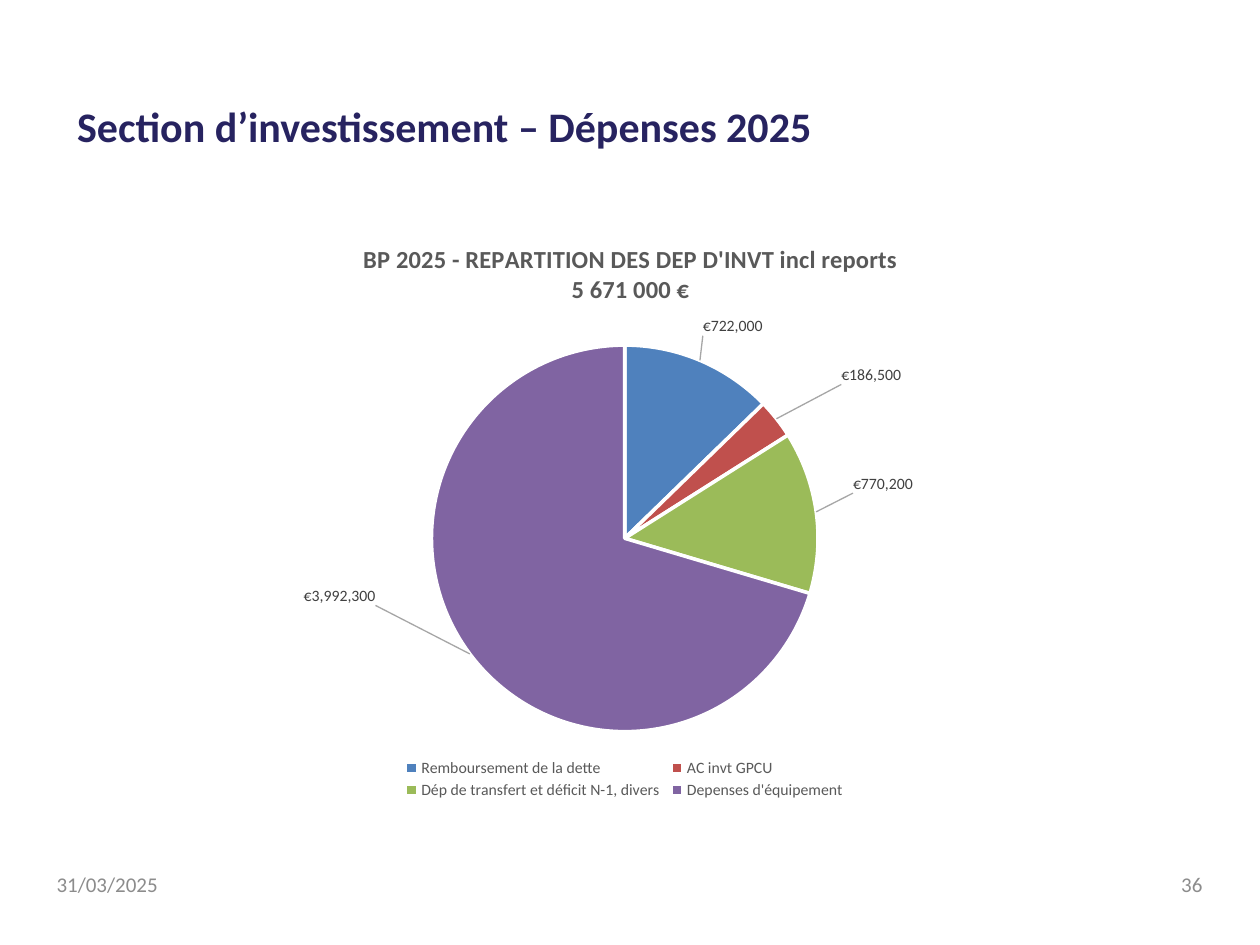
from lxml import etree
from pptx import Presentation, util as u
from pptx.chart.data import CategoryChartData
from pptx.dml.color import RGBColor
from pptx.enum import chart as ch, text
from pptx.oxml import parse_xml
from pptx.oxml.ns import nsdecls, qn

COLORS = {"title": "272360", "footer": "8C8C8C", "heading": "595959",
          "label": "404040", "leader": "A6A6A6", "border": "FFFFFF"}
FONT = "Calibri"
TITLE = "Section d’investissement – Dépenses 2025"
CHART_TITLE = ["BP 2025 - REPARTITION DES DEP D'INVT incl reports", "5 671 000 €"]
# category, amount, slice colour, label shift as fractions of the chart
EXPENSES = [
    ("Remboursement de la dette", 722000, "4F81BD", (0, -0.03)),
    ("AC invt GPCU", 186500, "C0504D", (0.06, -0.05)),
    ("Dép de transfert et déficit N-1, divers", 770200, "9BBB59", (0.03, -0.03)),
    ("Depenses d'équipement", 3992300, "8064A2", (-0.09, -0.12)),
]
FOOTERS = [("31/03/2025", 0.89, text.PP_ALIGN.LEFT),
           ("36", 18.57, text.PP_ALIGN.RIGHT)]


def style(font, size, color, bold=False):
    font.name, font.size, font.bold = FONT, u.Pt(size), bold
    font.color.rgb = RGBColor.from_string(COLORS[color])


def place(shape, left, top, width, height):
    shape.left, shape.top = u.Cm(left), u.Cm(top)
    shape.width, shape.height = u.Cm(width), u.Cm(height)


def write(shape, words, align, *look):
    frame = shape.text_frame
    frame.word_wrap = True
    frame.vertical_anchor = text.MSO_ANCHOR.MIDDLE
    paragraph = frame.paragraphs[0]
    paragraph.alignment = align
    run = paragraph.add_run()
    run.text = words
    style(run.font, *look)


def set_layout(parent, after, **values):
    """Give a chart part a manual layout, placed after the named child."""
    for old in parent.findall(qn("c:layout")):
        parent.remove(old)
    layout = parse_xml(f"<c:layout {nsdecls('c')}><c:manualLayout/></c:layout>")
    for tag, value in values.items():
        etree.SubElement(layout[0], qn(f"c:{tag}")).set("val", str(value))
    if after is None:
        parent.insert(0, layout)
    else:
        parent.find(qn(after)).addnext(layout)


def add_expense_chart(slide):
    data = CategoryChartData()
    data.categories = [row[0] for row in EXPENSES]
    data.add_series("Series 1", [row[1] for row in EXPENSES])
    chart = slide.shapes.add_chart(ch.XL_CHART_TYPE.PIE, u.Cm(2.69), u.Cm(4.32),
                                   u.Cm(19.81), u.Cm(11.99), data).chart
    style(chart.font, 10, "label")
    edges = {"xMode": "edge", "yMode": "edge"}

    frame = chart.chart_title.text_frame
    for index, line in enumerate(CHART_TITLE):
        paragraph = frame.add_paragraph() if index else frame.paragraphs[0]
        run = paragraph.add_run()
        run.text = line
        style(run.font, 14, "heading", True)
    chart.chart_title.include_in_layout = False
    set_layout(chart.chart_title._element, "c:tx", **edges, x=0.23, y=0.04)

    chart.has_legend = True
    legend = chart.legend
    legend.position = ch.XL_LEGEND_POSITION.BOTTOM
    legend.include_in_layout = False
    style(legend.font, 9, "heading")
    set_layout(legend._element, "c:legendPos", **edges, x=0.27, y=0.91, w=0.46, h=0.08)

    plot = chart.plots[0]
    plot.vary_by_categories = True
    set_layout(chart._chartSpace.chart.plotArea, None, layoutTarget="inner", **edges,
               x=0.3, y=0.22, w=0.4, h=0.65)

    series = plot.series[0]
    labels = series.data_labels
    labels.show_value = True
    labels.number_format, labels.number_format_is_linked = '"€"#,##0', False
    labels.position = ch.XL_LABEL_POSITION.OUTSIDE_END
    style(labels.font, 9, "label")
    for index, (_, _, color, (x, y)) in enumerate(EXPENSES):
        point = series.points[index]
        point.format.fill.solid()
        point.format.fill.fore_color.rgb = RGBColor.from_string(color)
        point.format.line.width = u.Pt(2)
        point.format.line.color.rgb = RGBColor.from_string(COLORS["border"])
        label = point.data_label
        style(label.font, 9, "label")
        label.position = ch.XL_LABEL_POSITION.OUTSIDE_END
        set_layout(labels._element.findall(qn("c:dLbl"))[index], "c:idx", x=x, y=y)

    for old in labels._element.findall(qn("c:showLeaderLines")):
        labels._element.remove(old)
    labels._element.append(parse_xml(f'<c:showLeaderLines {nsdecls("c")} val="1"/>'))
    labels._element.append(parse_xml(
        f'<c:leaderLines {nsdecls("c", "a")}><c:spPr><a:ln w="9525"><a:solidFill>'
        f'<a:srgbClr val="{COLORS["leader"]}"/></a:solidFill></a:ln></c:spPr></c:leaderLines>'))


def main():
    presentation = Presentation()
    presentation.slide_width, presentation.slide_height = u.Cm(25.4), u.Cm(19.05)
    slide = presentation.slides.add_slide(presentation.slide_layouts[5])
    title = slide.shapes.title
    place(title, 1.3, 1.93, 20.8, 1.19)
    write(title, TITLE, text.PP_ALIGN.LEFT, 24, "title", True)
    add_expense_chart(slide)
    for words, left, align in FOOTERS:
        box = slide.shapes.add_textbox(u.Cm(left), u.Cm(17.32), u.Cm(5.92), u.Cm(1.02))
        write(box, words, align, 12, "footer")
    presentation.save("out.pptx")


if __name__ == "__main__":
    main()
